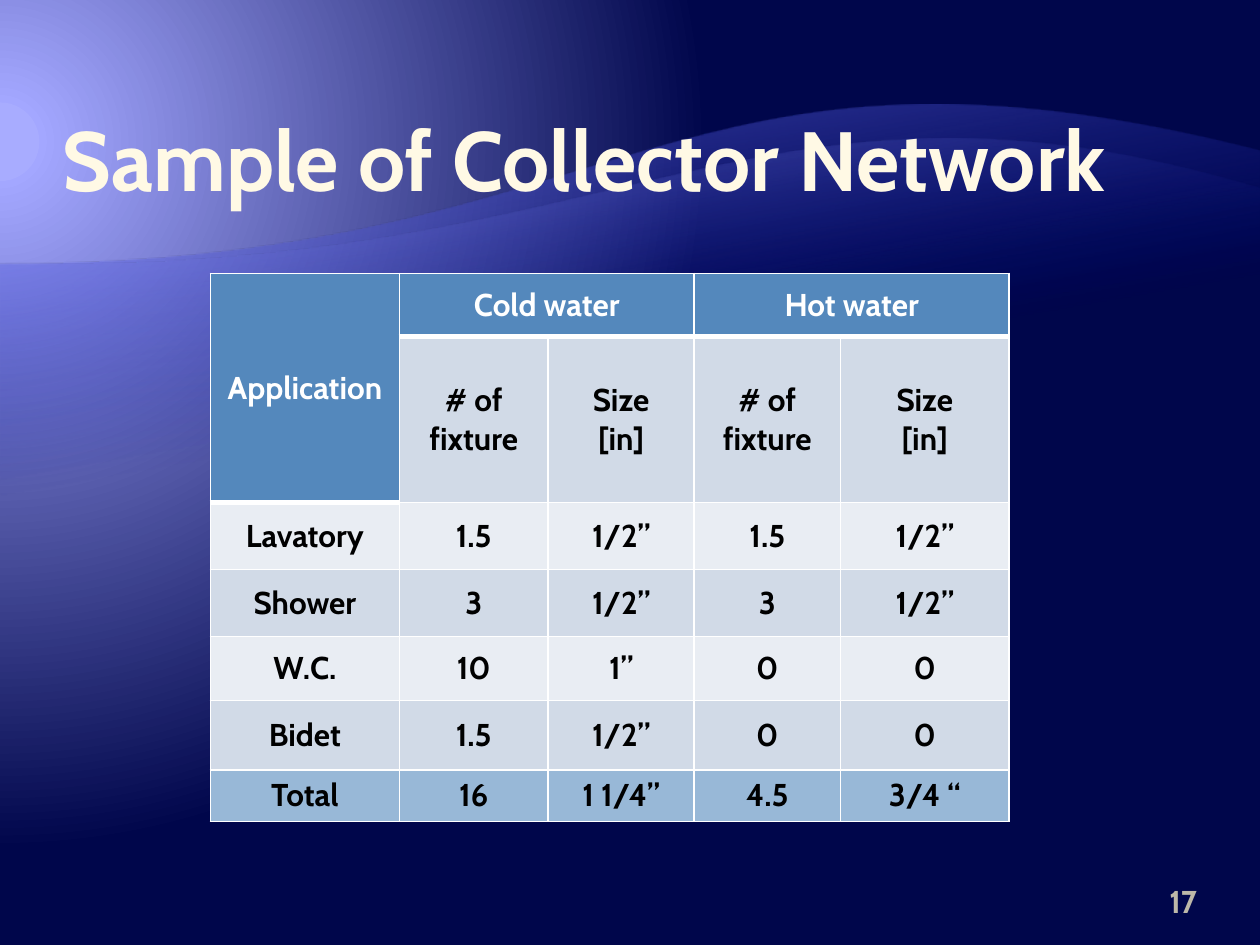
from lxml import etree
from pptx import Presentation, util as u
from pptx.dml.color import RGBColor
from pptx.enum import text
from pptx.oxml import parse_xml
from pptx.oxml.ns import nsdecls, qn

CREAM = RGBColor(0xFF, 0xF9, 0xE5)
TAUPE = RGBColor(0x8F, 0x84, 0x62)
GREY = RGBColor(0xBD, 0xB8, 0xA9)
WHITE = RGBColor(0xFF, 0xFF, 0xFF)
BLACK = RGBColor(0x00, 0x00, 0x00)
HEADER = RGBColor(0x54, 0x88, 0xBC)
BAND_DARK = RGBColor(0xD1, 0xDA, 0xE7)
BAND_LIGHT = RGBColor(0xE9, 0xED, 0xF3)
TOTAL = RGBColor(0x98, 0xB8, 0xD7)
NAVY = RGBColor(0x00, 0x06, 0x4B)
ROYAL = RGBColor(0x00, 0x0D, 0x9E)
VIOLET = RGBColor(0x79, 0x7F, 0xFF)
LILAC = RGBColor(0xA3, 0xA7, 0xFF)
PALE_LILAC = RGBColor(0xA8, 0xAC, 0xFF)

prs = Presentation()
prs.slide_width, prs.slide_height = u.Inches(10), u.Inches(7.5)
GRID = prs.slide_width // 100  # the slide is 100 columns by 75 rows
slide = prs.slides.add_slide(prs.slide_layouts[6])


def gradient(stops, direction):
    """Gradient fill element from (position %, colour, opacity %) stops."""
    marks = "".join(
        f'<a:gs pos="{pos * 1000}"><a:srgbClr val="{colour}">'
        f'<a:alpha val="{opacity * 1000}"/></a:srgbClr></a:gs>'
        for pos, colour, opacity in stops)
    return parse_xml(f'<a:gradFill {nsdecls("a")} rotWithShape="1">'
                     f'<a:gsLst>{marks}</a:gsLst>{direction}</a:gradFill>')


def add_run(paragraph, words, size, colour):
    run = paragraph.add_run()
    run.text = words
    run.font.name, run.font.size, run.font.bold = "Cabin", u.Pt(size), True
    run.font.color.rgb = colour
    return run


# Background glow from the upper left
slide.background.fill.solid()
plain = slide.background._cSld.find(".//" + qn("a:solidFill"))
plain.getparent().replace(plain, gradient(
    [(5, PALE_LILAC, 100), (5, LILAC, 100), (90, NAVY, 100)],
    '<a:path path="circle"><a:fillToRect l="20000" t="30000" r="135000" b="100000"/></a:path>'))

# Waves: right height, foot, control points of the crest, tint and its opacity
waves = [(12.5, 73.3, [(50, 21.3), (53.4, 0.5), (100, 12.5)], VIOLET, 55),
         (14.7, 63.7, [(50, 21.3), (59.8, 3.1), (100, 14.7)], LILAC, 30)]
for top, foot, crest, tint, opacity in waves:
    outline = slide.shapes.build_freeform(100, foot, scale=GRID)
    outline.add_line_segments([(0, foot), (0, 21.3), (100, top)], close=True)
    wave = outline.convert_to_shape()
    wave.shadow.inherit = False
    wave.line.fill.background()
    wave.fill.solid()
    flat = wave._element.spPr.find(qn("a:solidFill"))
    wave._element.spPr.replace(flat, gradient(
        [(65, ROYAL, 0), (100, tint, opacity)], '<a:lin ang="15600000" scaled="0"/>'))
    # python-pptx draws straight segments only, so bend the crest here
    path = wave._element.spPr.find(".//" + qn("a:path"))
    straight = path.findall(qn("a:lnTo"))[2]
    curve = etree.Element(qn("a:cubicBezTo"))
    x_unit = int(path.get("w")) / 100
    y_unit = int(path.get("h")) / (foot - top)
    for x, y in crest:
        etree.SubElement(curve, qn("a:pt"), x=str(round(x * x_unit)),
                         y=str(round((y - top) * y_unit)))
    path.replace(straight, curve)

# Title and slide number: box, insets in inches, alignment, words, size, colour
labels = [((5, 8.3, 90, 8.3), (0, 0.01, 0, 0.01), text.PP_ALIGN.LEFT,
           "Sample of Collector Network", 48, CREAM),
          ((89.2, 69.5, 5.8, 4), (0.1, 0.05, 0, 0.05), text.PP_ALIGN.RIGHT,
           "17", 18, GREY)]
for box, insets, align, words, size, colour in labels:
    frame = slide.shapes.add_textbox(*(round(v * GRID) for v in box)).text_frame
    frame.word_wrap = True
    frame.vertical_anchor = text.MSO_ANCHOR.BOTTOM
    (frame.margin_left, frame.margin_top,
     frame.margin_right, frame.margin_bottom) = map(u.Inches, insets)
    frame.paragraphs[0].alignment = align
    run = add_run(frame.paragraphs[0], words, size, colour)
    if size == 48:
        run.font._element.insert(0, parse_xml(
            f'<a:ln {nsdecls("a")} w="500"><a:solidFill>'
            f'<a:srgbClr val="{TAUPE}"/></a:solidFill></a:ln>'))

# Fixture table
columns = [15, 11.8, 11.6, 11.6, 13.4]
rows = [5, 13.2, 5.3, 5.3, 5.1, 5.5, 4.1]
fixtures = [
    ["Application", "Cold water", "", "Hot water", ""],
    ["", "# of fixture", "Size\n[in]", "# of fixture", "Size\n[in]"],
    ["Lavatory", "1.5", "1/2”", "1.5", "1/2”"],
    ["Shower", "3", "1/2”", "3", "1/2”"],
    ["W.C.", "10", "1”", "0", "0"],
    ["Bidet", "1.5", "1/2”", "0", "0"],
    ["Total", "16", "1 1/4”", "4.5", "3/4 “"],
]
row_fills = [HEADER, BAND_DARK, BAND_LIGHT, BAND_DARK, BAND_LIGHT, BAND_DARK, TOTAL]
table = slide.shapes.add_table(
    len(rows), len(columns), round(16.7 * GRID), round(21.7 * GRID),
    round(sum(columns) * GRID), round(sum(rows) * GRID)).table
table.horz_banding = False
for column, width in zip(table.columns, columns):
    column.width = round(width * GRID)
for row, height in zip(table.rows, rows):
    row.height = round(height * GRID)
for first, last in [((0, 0), (1, 0)), ((0, 1), (0, 2)), ((0, 3), (0, 4))]:
    table.cell(*first).merge(table.cell(*last))

for r, entries in enumerate(fixtures):
    for c, entry in enumerate(entries):
        cell = table.cell(r, c)
        heading = r == 0 or (r == 1 and c == 0)
        cell.vertical_anchor = text.MSO_ANCHOR.MIDDLE
        cell.fill.solid()
        cell.fill.fore_color.rgb = HEADER if heading else row_fills[r]
        below_heading = (r == 1 and c > 0) or (r == 2 and c == 0)
        weights = {"lnL": 1, "lnR": 1, "lnT": 3 if below_heading else 1,
                   "lnB": 3 if heading else 1}
        for i, (side, weight) in enumerate(weights.items()):
            cell._tc.get_or_add_tcPr().insert(i, parse_xml(
                f'<a:{side} {nsdecls("a")} w="{u.Pt(weight)}"><a:solidFill>'
                f'<a:srgbClr val="{WHITE}"/></a:solidFill></a:{side}>'))
        if not entry:
            continue
        for i, line in enumerate(entry.split("\n")):
            frame = cell.text_frame
            paragraph = frame.add_paragraph() if i else frame.paragraphs[0]
            paragraph.alignment = text.PP_ALIGN.CENTER
            add_run(paragraph, line, 18, WHITE if heading else BLACK)

prs.save("out.pptx")
